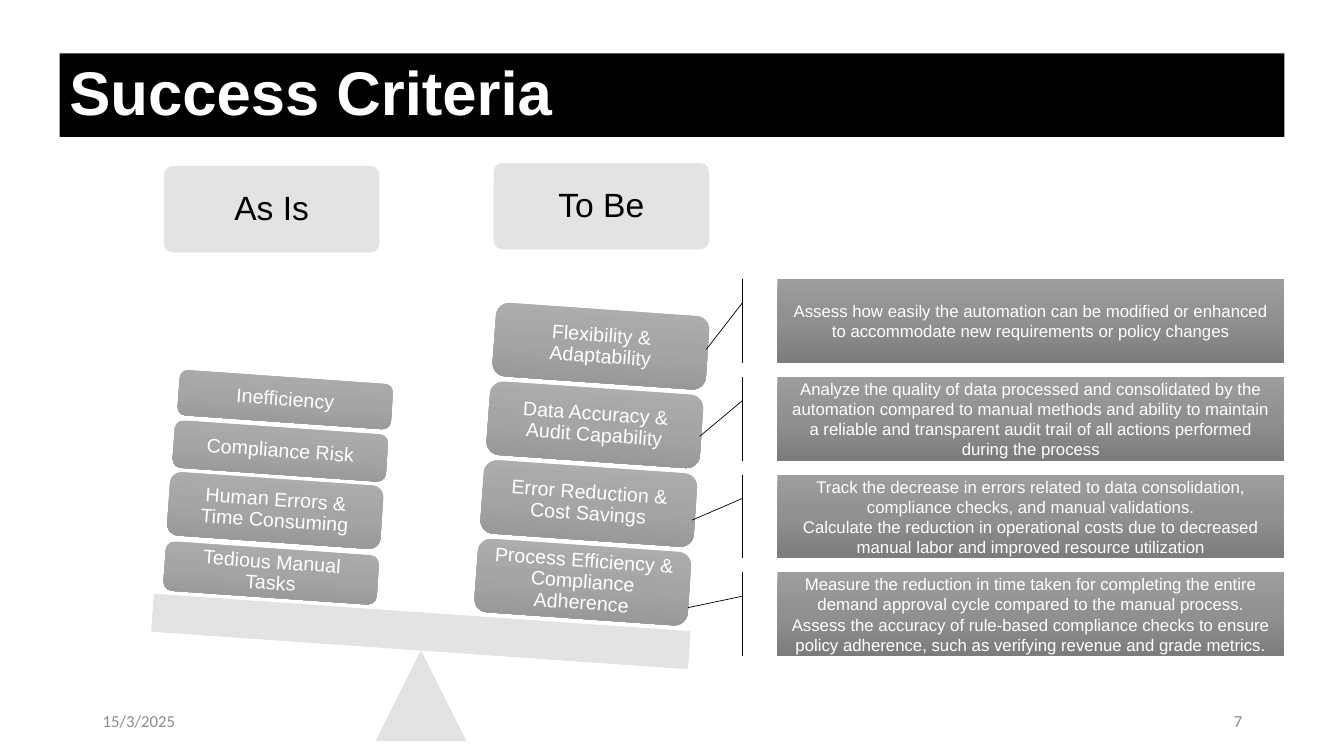
from copy import deepcopy
from dataclasses import dataclass

from lxml.etree import SubElement
from pptx import Presentation
from pptx.dml.color import RGBColor
from pptx.enum.shapes import MSO_SHAPE
from pptx.enum.text import MSO_ANCHOR, PP_ALIGN
from pptx.oxml.ns import qn
from pptx.util import Inches, Pt


@dataclass(frozen=True)
class Theme:
    black: str = "000000"
    white: str = "FFFFFF"
    pale: str = "E1E1E1"
    muted: str = "8C8C8C"
    block: tuple = ("AFAFAF", "A5A5A5", "939393")
    callout: tuple = ("9D9D9D", "909090", "7C7C7C")
    font: str = "Arial"
    footer_font: str = "Calibri"
    title_size: int = 44
    heading_size: int = 24
    block_size: int = 14
    small_size: int = 12
    hairline: float = 0.5
    opacity: int = 90
    tilt: int = 4


class SlideBuilder:
    def __init__(self, slide, theme):
        self.s = slide
        self.t = theme

    def shape(self, kind, x, y, w, h):
        sp = self.s.shapes.add_shape(kind, Inches(x), Inches(y), Inches(w), Inches(h))
        sp.shadow.inherit = False
        sp.line.fill.background()
        return sp

    def text(self, sp, text, size, color, align=PP_ALIGN.CENTER, font=None,
             bold=False, spacing=None, inset=None):
        tf = sp.text_frame
        tf.text = text
        tf.word_wrap = True
        tf.vertical_anchor = MSO_ANCHOR.MIDDLE
        if inset is not None:
            tf.margin_left = tf.margin_right = Inches(inset)
            tf.margin_top = tf.margin_bottom = Inches(inset)
        for p in tf.paragraphs:
            p.alignment = align
            if spacing:
                p.line_spacing = spacing
            for r in p.runs:
                r.font.name = font or self.t.font
                r.font.size = Pt(size)
                r.font.bold = bold
                r.font.color.rgb = RGBColor.from_string(color)

    def gradient(self, sp, colors):
        """Fill from top to bottom with three evenly spaced stops."""
        sp.fill.gradient()
        sp.fill.gradient_angle = 270
        stops = sp._element.spPr.find(qn("a:gradFill")).find(qn("a:gsLst"))
        stops.insert(1, deepcopy(stops[0]))
        for i, (stop, color) in enumerate(zip(sp.fill.gradient_stops, colors)):
            stop.position = i / 2
            stop.color.rgb = RGBColor.from_string(color)

    def pale(self, kind, x, y, w, h):
        """Light, slightly transparent part of the scales."""
        sp = self.shape(kind, x, y, w, h)
        for fill in (sp.fill, sp.line.fill):
            fill.solid()
            fill.fore_color.rgb = RGBColor.from_string(self.t.pale)
        sp.line.width = Pt(self.t.hairline)
        for color in sp._element.spPr.iter(qn("a:srgbClr")):
            SubElement(color, qn("a:alpha")).set("val", str(self.t.opacity * 1000))
        return sp

    def title(self, text, x, y, w, h):
        sp = self.shape(MSO_SHAPE.RECTANGLE, x, y, w, h)
        sp.fill.solid()
        sp.fill.fore_color.rgb = RGBColor.from_string(self.t.black)
        self.text(sp, text, self.t.title_size, self.t.white, PP_ALIGN.LEFT,
                  bold=True, spacing=0.9)

    def heading(self, text, x, y):
        sp = self.pale(MSO_SHAPE.ROUNDED_RECTANGLE, x, y, 2.13, 0.85)
        sp.adjustments[0] = 0.1
        self.text(sp, text, self.t.heading_size, self.t.black, spacing=0.9, inset=0.12)

    def block(self, text, x, y, h):
        sp = self.shape(MSO_SHAPE.ROUNDED_RECTANGLE, x, y, 2.12, h)
        sp.adjustments[0] = 0.18
        sp.rotation = self.t.tilt
        self.gradient(sp, self.t.block)
        self.text(sp, text, self.t.block_size, self.t.white, spacing=0.9, inset=0.09)

    def callout(self, text, y, tip_y, tip_x):
        sp = self.shape(MSO_SHAPE.LINE_CALLOUT_1_ACCENT_BAR, 7.71, y, 5.03, 0.83)
        for i, value in enumerate((0.284, -0.069, tip_y, tip_x)):
            sp.adjustments[i] = value
        self.gradient(sp, self.t.callout)
        sp.line.color.rgb = RGBColor.from_string(self.t.black)
        sp.line.width = Pt(self.t.hairline)
        self.text(sp, text, self.t.small_size, self.t.white)

    def footer(self, text, x, align):
        sp = self.s.shapes.add_textbox(Inches(x), Inches(6.95), Inches(3), Inches(0.4))
        self.text(sp, text, self.t.small_size, self.t.muted, align, self.t.footer_font)


# (text, left, top, height), bottom to top
AS_IS = [
    ("Tedious Manual Tasks", 1.63, 5.44, 0.49),
    ("Human Errors & Time Consuming", 1.67, 4.75, 0.63),
    ("Compliance Risk", 1.72, 4.24, 0.47),
    ("Inefficiency", 1.77, 3.74, 0.45),
]
# Bottom to top
TO_BE = [
    "Process Efficiency & Compliance Adherence",
    "Error Reduction & Cost Savings",
    "Data Accuracy & Audit Capability",
    "Flexibility & Adaptability",
]
# (text, pointer tip y, pointer tip x), top to bottom
CALLOUTS = [
    ("Assess how easily the automation can be modified or enhanced to accommodate "
     "new requirements or policy changes", 0.839, -0.14),
    ("Analyze the quality of data processed and consolidated by the automation "
     "compared to manual methods and ability to maintain a reliable and transparent "
     "audit trail of all actions performed during the process", 0.71, -0.153),
    ("Track the decrease in errors related to data consolidation, compliance checks, "
     "and manual validations.\nCalculate the reduction in operational costs due to "
     "decreased manual labor and improved resource utilization", 0.543, -0.168),
    ("Measure the reduction in time taken for completing the entire demand approval "
     "cycle compared to the manual process.\nAssess the accuracy of rule-based "
     "compliance checks to ensure policy adherence, such as verifying revenue and "
     "grade metrics.", 0.42, -0.176),
]


def main():
    prs = Presentation()
    prs.slide_width, prs.slide_height = Inches(13.33), Inches(7.5)
    b = SlideBuilder(prs.slides.add_slide(prs.slide_layouts[6]), Theme())

    # Title and footer
    b.title("Success Criteria", 0.59, 0.53, 12.15, 0.83)
    b.footer("7", 9.42, PP_ALIGN.RIGHT)
    b.footer("15/3/2025", 0.92, PP_ALIGN.LEFT)

    # Scales: headings, pivot and tilted beam
    b.heading("As Is", 1.63, 1.65)
    b.heading("To Be", 4.9, 1.62)
    b.pale(MSO_SHAPE.ISOSCELES_TRIANGLE, 3.73, 6.46, 0.89, 0.89)
    beam = b.pale(MSO_SHAPE.RECTANGLE, 1.51, 6.08, 5.33, 0.37)
    beam.rotation = b.t.tilt

    # Stacked blocks on both sides
    for i, text in enumerate(TO_BE):
        b.block(text, 4.72 + i * 0.06, 5.41 - i * 0.78, 0.73)
    for text, x, y, h in AS_IS:
        b.block(text, x, y, h)

    # Explanations of the target criteria
    for i, (text, tip_y, tip_x) in enumerate(CALLOUTS):
        b.callout(text, 2.77 + i * 0.97, tip_y, tip_x)

    prs.save("out.pptx")


if __name__ == "__main__":
    main()
